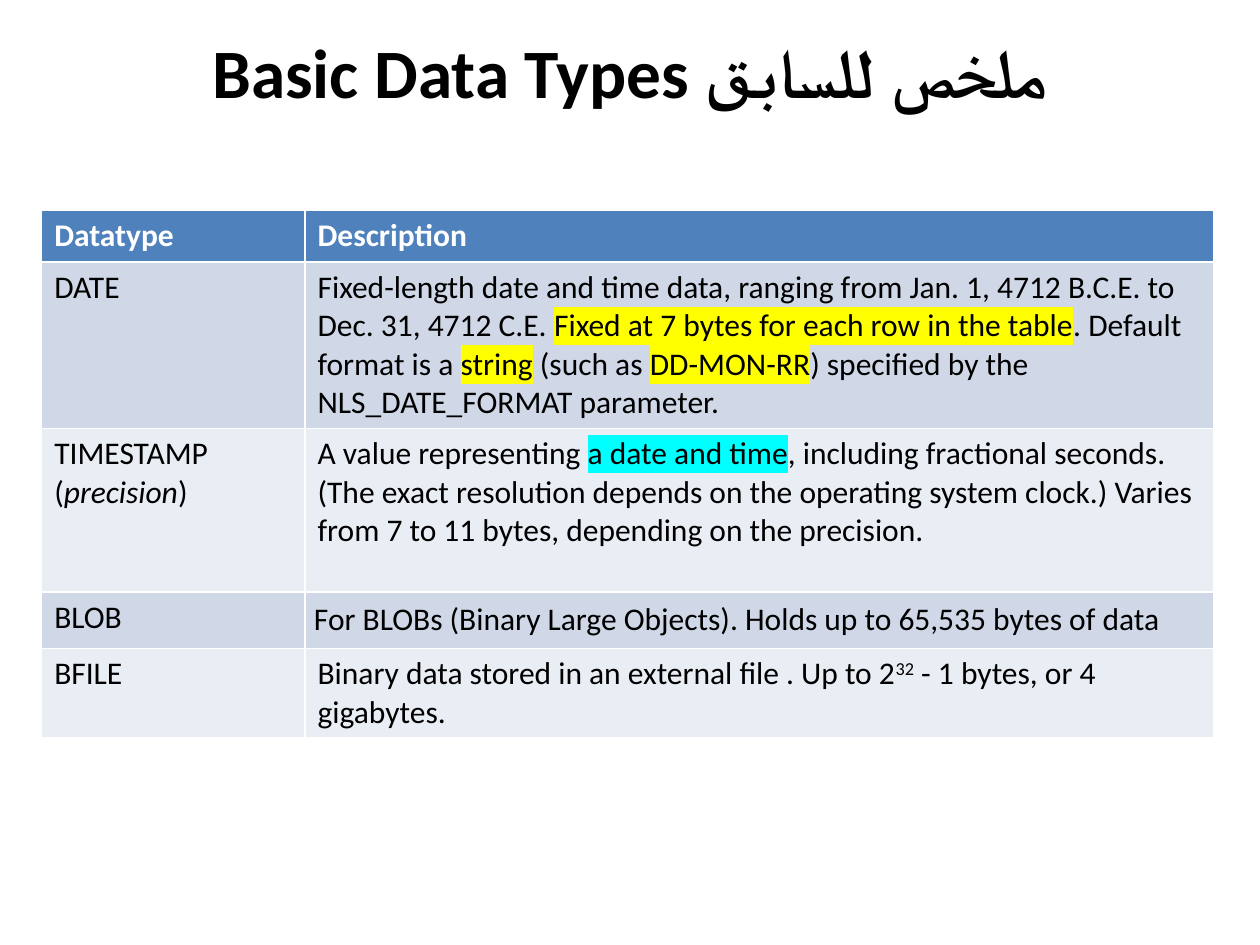
from lxml import etree
from pptx import Presentation
from pptx.dml.color import RGBColor
from pptx.enum.text import MSO_ANCHOR, PP_ALIGN
from pptx.oxml.ns import qn
from pptx.util import Cm, Pt

MIDDLE, CENTER = MSO_ANCHOR.MIDDLE, PP_ALIGN.CENTER
COLORS = {"head": "4F81BD", "odd": "D0D8E8", "even": "E9EDF4", "white": "FFFFFF",
          "black": "000000", "yellow": "FFFF00", "cyan": "00FFFF"}
TITLE = "Basic Data Types ملخص للسابق"
COLS = (5.31, 18.31)
ROWS = (1.04, 3.3, 3.3, 1.04, 1.78)
INSET = 0.18
CELLS = [
    ([("Datatype", "")], [("Description", "")]),
    ([("DATE", "")],
     [("Fixed-length date and time data, ranging from Jan. 1, 4712 B.C.E. to "
       "Dec. 31, 4712 C.E. ", ""),
      ("Fixed at 7 bytes for each row in the table", "yellow"),
      (". Default format is a ", ""), ("string", "yellow"),
      (" (such as ", ""), ("DD-MON-RR", "yellow"),
      (") specified by the NLS_DATE_FORMAT parameter.", "")]),
    ([("TIMESTAMP (", ""), ("precision", "italic"), (")", "")],
     [("A value representing ", ""), ("a date and time", "cyan"),
      (", including fractional seconds. (The exact resolution depends on the "
       "operating system clock.) Varies from 7 to 11 bytes, depending on the "
       "precision.", "")]),
    ([("BLOB", "")],
     [("For BLOBs (Binary Large Objects). Holds up to 65,535 bytes of data", "")]),
    ([("BFILE", "")],
     [("Binary data stored in an external file . Up to 2", ""), ("32", "super"),
      (" - 1 bytes, or 4 gigabytes.", "")]),
]


def apply(item, **values):
    """Set each named format value on an item."""
    for name, value in values.items():
        setattr(item, name, value)


def add_run(para, text, color, size, bold, mark=""):
    """Add a formatted run, with an optional highlight, italic or superscript."""
    run = para.add_run()
    run.text = text
    run.font.color.rgb = RGBColor.from_string(COLORS[color])
    apply(run.font, name="Calibri", size=Pt(size), bold=bold, italic=mark == "italic")
    props = run.font._element
    if mark == "super":
        props.set("baseline", "30000")
    elif mark in COLORS:
        light = etree.Element(qn("a:highlight"))
        etree.SubElement(light, qn("a:srgbClr")).set("val", COLORS[mark])
        props.find(qn("a:solidFill")).addnext(light)


def add_title(slide, left, top, width, height):
    """Fill the title placeholder and fit it to the box."""
    title = slide.shapes.title
    apply(title, left=Cm(left), top=Cm(top), width=Cm(width), height=Cm(height))
    title.text_frame.vertical_anchor = MIDDLE
    para = title.text_frame.paragraphs[0]
    para.alignment = CENTER
    add_run(para, TITLE, "black", 39.6, True)


def add_types(slide, left, top, width, height):
    """Place the table of data types in the box."""
    table = slide.shapes.add_table(len(ROWS), len(COLS), Cm(left), Cm(top),
                                   Cm(width), Cm(height)).table
    for col, size in zip(table.columns, COLS):
        col.width = Cm(size)
    for i, (row, size) in enumerate(zip(table.rows, ROWS)):
        row.height = Cm(size)
        head = i == 0
        fill = "head" if head else "odd" if i % 2 else "even"
        for cell, parts in zip(row.cells, CELLS[i]):
            cell.fill.solid()
            cell.fill.fore_color.rgb = RGBColor.from_string(COLORS[fill])
            for text, mark in parts:
                add_run(cell.text_frame.paragraphs[0], text,
                        "white" if head else "black", 18, head, mark)
    sides = ("margin_left", "margin_top", "margin_right", "margin_bottom")
    apply(table.cell(3, 1), **dict.fromkeys(sides, Cm(INSET)))


def main():
    """Build and save the slide."""
    deck = Presentation()
    apply(deck, slide_width=Cm(25.4), slide_height=Cm(19.05))
    slide = deck.slides.add_slide(deck.slide_layouts[5])
    add_title(slide, 1.27, 0.64, 22.86, 1.57)
    add_types(slide, 0.84, 4.24, sum(COLS), sum(ROWS))
    deck.save("out.pptx")


if __name__ == "__main__":
    main()
